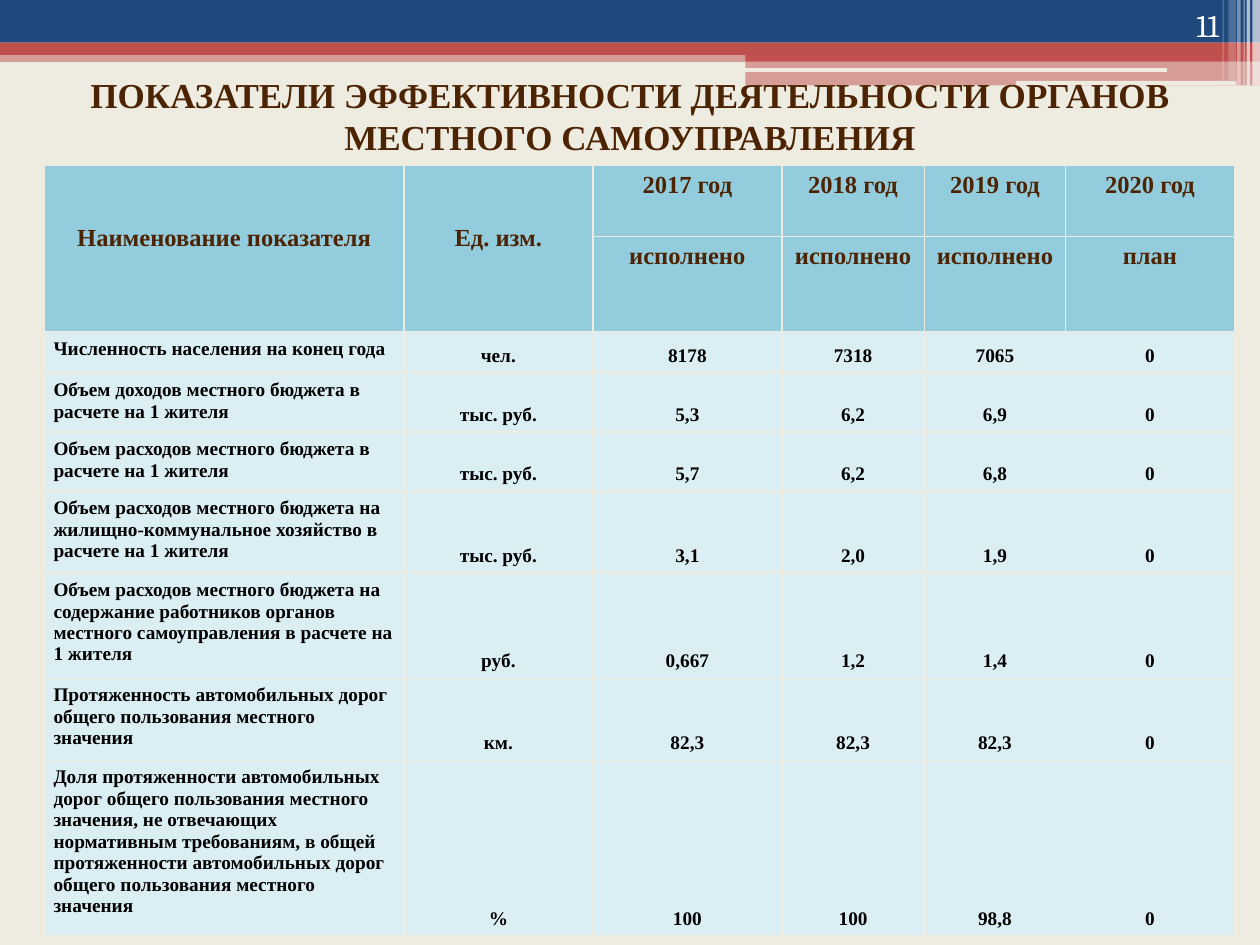
from lxml import etree
from pptx import Presentation
from pptx.dml.color import RGBColor
from pptx.enum.shapes import MSO_SHAPE
from pptx.enum.text import MSO_ANCHOR, PP_ALIGN
from pptx.oxml.ns import qn
from pptx.util import Pt

RECT, ROUND = MSO_SHAPE.RECTANGLE, MSO_SHAPE.ROUNDED_RECTANGLE
TOP, MID, LOW = MSO_ANCHOR.TOP, MSO_ANCHOR.MIDDLE, MSO_ANCHOR.BOTTOM
LEFT, MIDDLE, RIGHT = PP_ALIGN.LEFT, PP_ALIGN.CENTER, PP_ALIGN.RIGHT

CREAM = RGBColor(0xEE, 0xEC, 0xE1)
NAVY = RGBColor(0x1F, 0x49, 0x7D)
RED = RGBColor(0xC0, 0x50, 0x4D)
WHITE = RGBColor(0xFF, 0xFF, 0xFF)
BLACK = RGBColor(0, 0, 0)
BROWN = RGBColor(0x4D, 0x24, 0x03)
SKY = RGBColor(0x93, 0xCD, 0xDD)
PALE = RGBColor(0xDB, 0xEE, 0xF4)
SERIF = "Times New Roman"

TITLE = "ПОКАЗАТЕЛИ ЭФФЕКТИВНОСТИ ДЕЯТЕЛЬНОСТИ ОРГАНОВ МЕСТНОГО САМОУПРАВЛЕНИЯ"
PAGE = "11"
HEADS = ["Наименование показателя", "Ед. изм."]
YEARS = [("2017 год", "исполнено"), ("2018 год", "исполнено"),
         ("2019 год", "исполнено"), ("2020 год", "план")]
ROWS = [
    ("Численность населения на конец года", "чел.", "8178", "7318", "7065", "0"),
    ("Объем доходов местного бюджета в расчете на 1 жителя",
     "тыс. руб.", "5,3", "6,2", "6,9", "0"),
    ("Объем расходов местного бюджета в расчете на 1 жителя",
     "тыс. руб.", "5,7", "6,2", "6,8", "0"),
    ("Объем расходов местного бюджета на жилищно-коммунальное хозяйство "
     "в расчете на 1 жителя", "тыс. руб.", "3,1", "2,0", "1,9", "0"),
    ("Объем расходов местного бюджета на содержание работников органов "
     "местного самоуправления в расчете на 1 жителя",
     "руб.", "0,667", "1,2", "1,4", "0"),
    ("Протяженность автомобильных дорог общего пользования местного значения",
     "км.", "82,3", "82,3", "82,3", "0"),
    ("Доля протяженности автомобильных дорог общего пользования местного "
     "значения, не отвечающих нормативным требованиям, в общей протяженности "
     "автомобильных дорог общего пользования местного значения",
     "%", "100", "100", "98,8", "0"),
]
WIDTHS = [205.4, 108, 108, 81.4, 80.8, 96.4]
HEIGHTS = [40.5, 53.5, 23.8, 33.7, 33.7, 46.8, 60.2, 46.8, 100.2]

# left, top, width, height, colour, opacity in percent, preset
BANDS = [
    (0, 28.8, 720, 6.6, RED, 50, RECT),
    (0, 0, 720, 24.4, NAVY, 100, RECT),
    (0, 24.4, 720, 7, RED, 100, RECT),
    (426, 28, 294, 7, RED, 100, RECT),
    (426, 34.6, 294, 14.2, RED, 50, RECT),
    (425.7, 38.9, 241.2, 2.2, CREAM, 100, ROUND),
    (580.5, 46.2, 126, 2.6, CREAM, 100, ROUND),
]
# left, width, height, opacity of the white stripes
STRIPES = [(715.7, 4.3, 48.8, 65), (712.3, 2, 48.8, 65), (710.6, 0.7, 48.8, 60),
           (707, 2, 48.8, 40), (702, 4.3, 46, 20), (698.6, 0.7, 46, 30)]
BANDS += [(x, 0, w, h, WHITE, a, RECT) for x, w, h, a in STRIPES]


def put(frame, text, size=11, color=BLACK, font=SERIF, bold=True, align=MIDDLE):
    frame.word_wrap = True
    para = frame.paragraphs[0]
    para.alignment = align
    run = para.add_run()
    run.text = text
    run.font.size, run.font.name, run.font.bold = Pt(size), font, bold
    run.font.color.rgb = color


def band(slide, x, y, w, h, color, alpha, kind):
    shape = slide.shapes.add_shape(kind, Pt(x), Pt(y), Pt(w), Pt(h))
    shape.shadow.inherit = False
    shape.fill.solid()
    shape.fill.fore_color.rgb = color
    shape.line.fill.background()
    if alpha < 100:
        tone = shape.fill._xPr.find(".//" + qn("a:srgbClr"))
        etree.SubElement(tone, qn("a:alpha"), val=str(alpha * 1000))


def label(slide, x, y, w, h, text, anchor, **form):
    frame = slide.shapes.add_textbox(Pt(x), Pt(y), Pt(w), Pt(h)).text_frame
    frame.vertical_anchor = anchor
    put(frame, text, **form)


def style(cell, fill):
    """Set the fill, insets and four borders of a cell."""
    cell.margin_left = cell.margin_right = Pt(5.2)
    cell.margin_top = cell.margin_bottom = Pt(3.6)
    cell.fill.solid()
    cell.fill.fore_color.rgb = fill
    props = cell._tc.get_or_add_tcPr()
    for i, side in enumerate("LRTB"):
        line = etree.Element(qn("a:ln" + side), w=str(Pt(1)))
        solid = etree.SubElement(line, qn("a:solidFill"))
        etree.SubElement(solid, qn("a:srgbClr"), val=str(CREAM))
        props.insert(i, line)


def grid(slide):
    table = slide.shapes.add_table(
        len(HEIGHTS), len(WIDTHS), Pt(25.4), Pt(94.6),
        Pt(sum(WIDTHS)), Pt(sum(HEIGHTS))).table
    for col, w in zip(table.columns, WIDTHS):
        col.width = Pt(w)
    for r, h in enumerate(HEIGHTS):
        table.rows[r].height = Pt(h)
        for c in range(len(WIDTHS)):
            style(table.cell(r, c), SKY if r < 2 else PALE)

    head = {"size": 14, "color": BROWN}
    for c, text in enumerate(HEADS):
        cell = table.cell(0, c)
        cell.merge(table.cell(1, c))
        cell.margin_top = Pt(34)
        put(cell.text_frame, text, **head)
    for c, pair in enumerate(YEARS, len(HEADS)):
        for r, text in enumerate(pair):
            put(table.cell(r, c).text_frame, text, **head)
    for r, row in enumerate(ROWS, 2):
        for c, text in enumerate(row):
            cell = table.cell(r, c)
            cell.vertical_anchor = LOW if c else TOP
            put(cell.text_frame, text, align=MIDDLE if c else LEFT)


def main():
    deck = Presentation()
    deck.slide_width, deck.slide_height = Pt(720), Pt(540)
    slide = deck.slides.add_slide(deck.slide_layouts[6])
    slide.background.fill.solid()
    slide.background.fill.fore_color.rgb = CREAM
    for item in BANDS:
        band(slide, *item)
    label(slide, 36, 32, 648, 67.5, TITLE, MID, size=20, color=BROWN)
    grid(slide)
    label(slide, 643.7, 0, 60, 28.8, PAGE, LOW, size=18, color=WHITE,
          font="Cambria", bold=False, align=RIGHT)
    deck.save("out.pptx")


if __name__ == "__main__":
    main()
